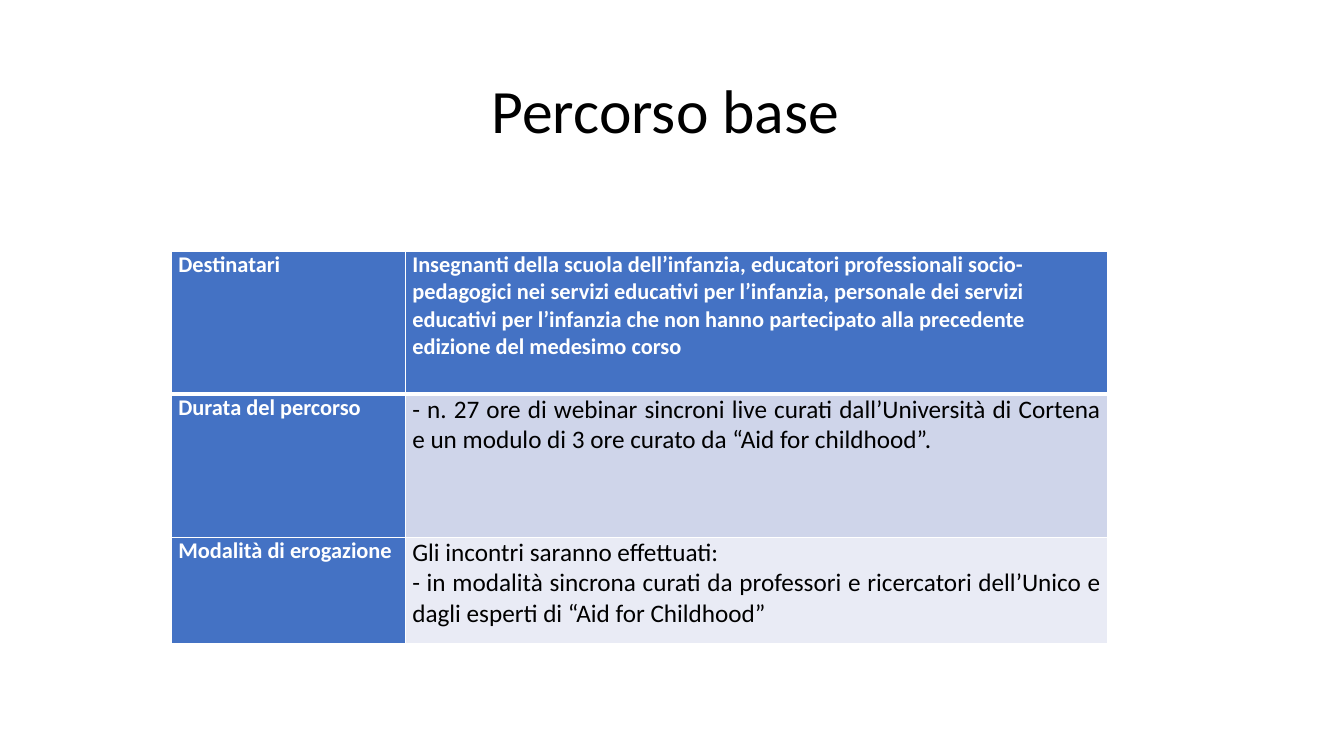
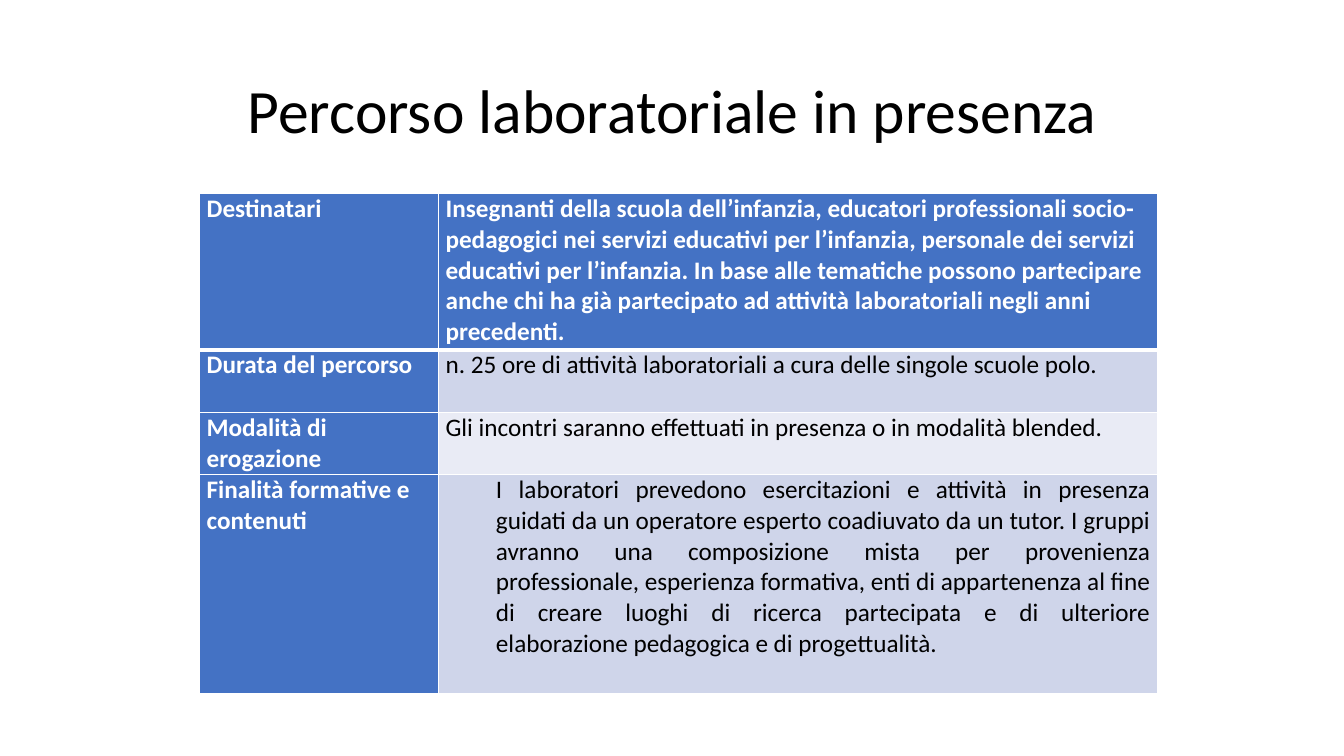
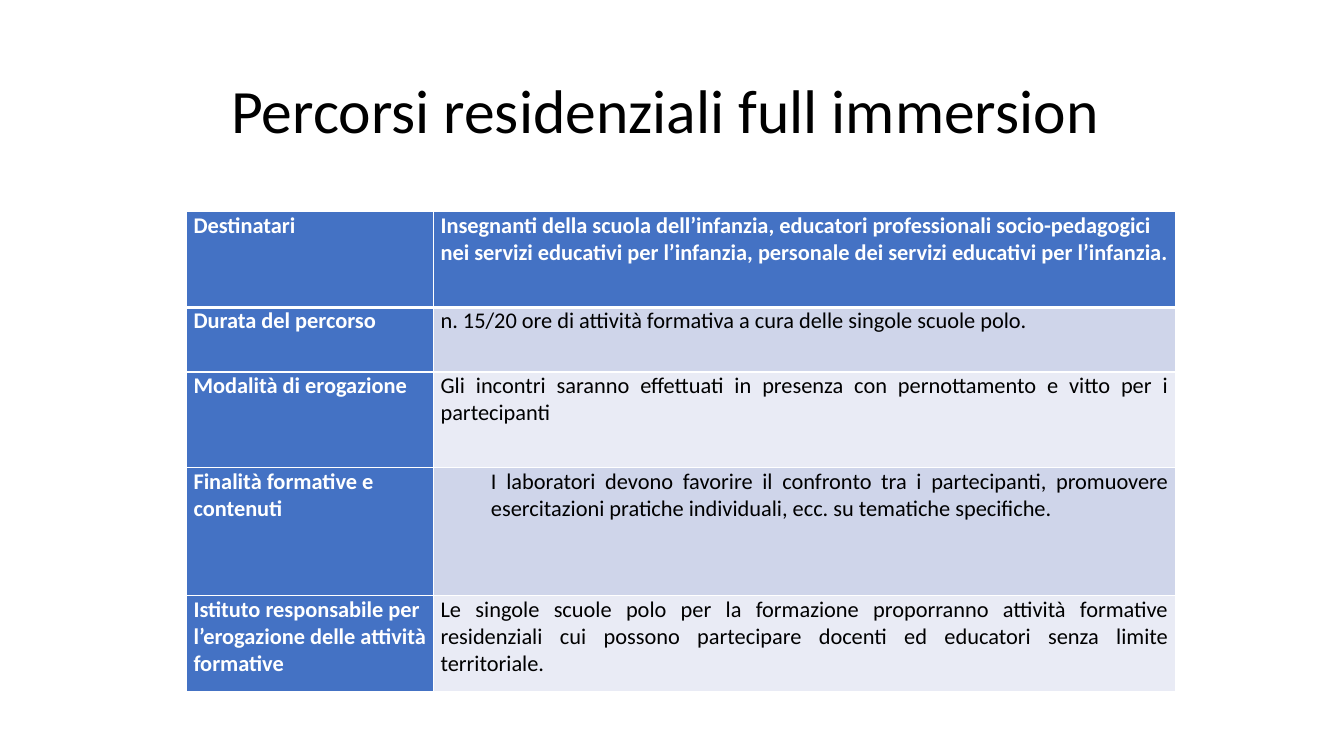
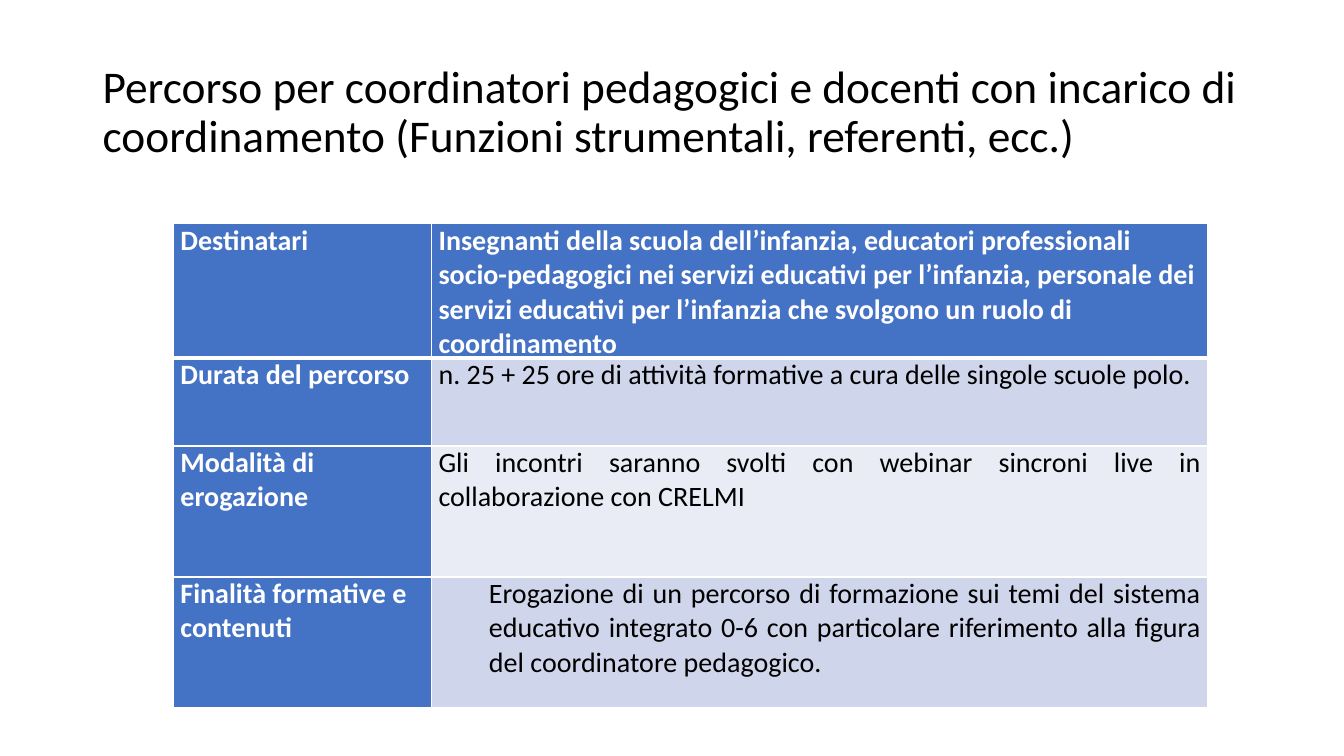
import pptx
import pptx.util
import pptx.dml.color
import pptx.enum.text
import lxml.etree

Inches = pptx.util.Inches
Pt = pptx.util.Pt
ALIGN = pptx.enum.text.PP_ALIGN
FONT = "Calibri"
COLORS = {"head": "4472C4", "odd": "CFD5EA", "even": "E9EBF5",
          "white": "FFFFFF", "black": "000000"}
STAFF = ("Insegnanti della scuola dell’infanzia, educatori professionali "
         "socio-pedagogici nei servizi educativi per l’infanzia, "
         "personale dei servizi educativi per l’infanzia")
WHO, TIME, MODE = "Destinatari", "Durata del percorso", "Modalità di erogazione"
GOALS = "Finalità formative e contenuti"

pages = [
    {"title": "Percorso base ", "size": 44, "align": ALIGN.CENTER,
     "at": (1.7, 2.49), "cols": (2.32, 6.97), "label": 16, "body": 18,
     "rows": [
         (1.42, WHO, STAFF + " che non hanno partecipato alla precedente "
          "edizione del medesimo corso"),
         (1.42, TIME, "- n. 27 ore di webinar sincroni live curati "
          "dall’Università di Cortena e un modulo di 3 ore curato da "
          "“Aid for childhood”."),
         (1.06, MODE, "Gli incontri saranno effettuati:\n"
          "- in modalità sincrona curati da professori e ricercatori "
          "dell’Unico e dagli esperti di “Aid for Childhood”"),
     ]},
    {"title": "Percorso laboratoriale in presenza", "size": 44,
     "align": ALIGN.CENTER,
     "at": (1.98, 1.92), "cols": (2.37, 7.13), "label": 18, "body": 18,
     "rows": [
         (1.55, WHO, STAFF + ". In base alle tematiche possono partecipare "
          "anche chi ha già partecipato ad attività laboratoriali negli "
          "anni precedenti."),
         (0.62, TIME, "n. 25 ore di attività laboratoriali a cura delle "
          "singole scuole polo."),
         (0.62, MODE, "Gli incontri saranno effettuati in presenza o in "
          "modalità blended."),
         (2.17, GOALS, "I laboratori prevedono esercitazioni e attività in "
          "presenza guidati da un operatore esperto coadiuvato da un tutor. "
          "I gruppi avranno una composizione mista per provenienza "
          "professionale, esperienza formativa, enti di appartenenza al fine "
          "di creare luoghi di ricerca partecipata e di ulteriore "
          "elaborazione pedagogica e di progettualità."),
     ]},
    {"title": "Percorsi residenziali full immersion ", "size": 44,
     "align": ALIGN.CENTER,
     "at": (1.85, 2.1), "cols": (2.45, 7.36), "label": 16, "body": 16,
     "rows": [
         (0.95, WHO, STAFF + "."),
         (0.64, TIME, "n. 15/20 ore di attività formativa a cura delle "
          "singole scuole polo."),
         (0.95, MODE, "Gli incontri saranno effettuati in presenza con "
          "pernottamento e vitto per i partecipanti"),
         (1.27, GOALS, "I laboratori devono favorire il confronto tra i "
          "partecipanti, promuovere esercitazioni pratiche individuali, "
          "ecc. su tematiche specifiche."),
         (0.95, "Istituto responsabile per l’erogazione delle attività "
          "formative", "Le singole scuole polo per la formazione proporranno "
          "attività formative residenziali cui possono partecipare docenti "
          "ed educatori senza limite territoriale."),
     ]},
    {"title": "Percorso per coordinatori pedagogici e docenti con incarico di "
     "coordinamento (Funzioni strumentali, referenti, ecc.)", "size": 32.4,
     "align": ALIGN.LEFT,
     "at": (1.72, 2.22), "cols": (2.56, 7.7), "label": 20, "body": 20,
     "rows": [
         (1.3, WHO, STAFF + " che svolgono un ruolo di coordinamento"),
         (0.87, TIME, "n. 25 + 25 ore di attività formative a cura delle "
          "singole scuole polo."),
         (1.3, MODE, "Gli incontri saranno svolti con webinar sincroni live "
          "in collaborazione con CRELMI"),
         (1.3, GOALS, "Erogazione di un percorso di formazione sui temi del "
          "sistema educativo integrato 0-6 con particolare riferimento alla "
          "figura del coordinatore pedagogico."),
     ]},
]


def style(para, size, color, bold, align):
    para.font.name = FONT
    para.font.size = Pt(size)
    para.font.bold = bold
    para.font.color.rgb = pptx.dml.color.RGBColor.from_string(COLORS[color])
    para.alignment = align


def border(cell, top, bottom):
    """Draw white cell edges; top and bottom are widths in points."""
    props = cell._tc.get_or_add_tcPr()
    edges = {"lnL": 1, "lnR": 1, "lnT": top, "lnB": bottom}
    for spot, (tag, width) in enumerate(edges.items()):
        line = pptx.oxml.parse_xml(
            f'<a:{tag} xmlns:a="http://schemas.openxmlformats.org/drawingml/2006/main"'
            f' w="{Pt(width)}"><a:solidFill><a:srgbClr val="{COLORS["white"]}"/>'
            f'</a:solidFill></a:{tag}>')
        props.insert(spot, line)


deck = pptx.Presentation()
deck.slide_width, deck.slide_height = Inches(13.33), Inches(7.5)

for page in pages:
    slide = deck.slides.add_slide(deck.slide_layouts[6])
    frame = slide.shapes.add_textbox(
        Inches(0.92), Inches(0.4), Inches(11.5), Inches(1.45)).text_frame
    frame.word_wrap = True
    frame.vertical_anchor = pptx.enum.text.MSO_ANCHOR.MIDDLE
    frame.text = page["title"]
    style(frame.paragraphs[0], page["size"], "black", False, page["align"])
    frame.paragraphs[0].line_spacing = 0.9

    rows, cols = page["rows"], page["cols"]
    left, top = page["at"]
    table = slide.shapes.add_table(
        len(rows), len(cols), Inches(left), Inches(top), Inches(sum(cols)),
        Inches(sum(row[0] for row in rows))).table
    for col, width in zip(table.columns, cols):
        col.width = Inches(width)
    for r, (height, *texts) in enumerate(rows):
        table.rows[r].height = Inches(height)
        for c, text in enumerate(texts):
            cell = table.cell(r, c)
            cell.margin_left = cell.margin_right = Inches(0.07)
            cell.margin_top = cell.margin_bottom = 0
            head = r == 0 or c == 0
            fill = "head" if head else "odd" if r % 2 else "even"
            cell.fill.solid()
            cell.fill.fore_color.rgb = pptx.dml.color.RGBColor.from_string(COLORS[fill])
            border(cell, 3 if r == 1 else 1, 3 if r == 0 else 1)
            cell.text = text
            for para in cell.text_frame.paragraphs:
                if head:
                    style(para, page["label"], "white", True, ALIGN.LEFT)
                else:
                    style(para, page["body"], "black", False, ALIGN.JUSTIFY)
                    if texts[0] == GOALS:
                        para._p.get_or_add_pPr().set("marL", str(Inches(0.5)))

deck.save("out.pptx")
